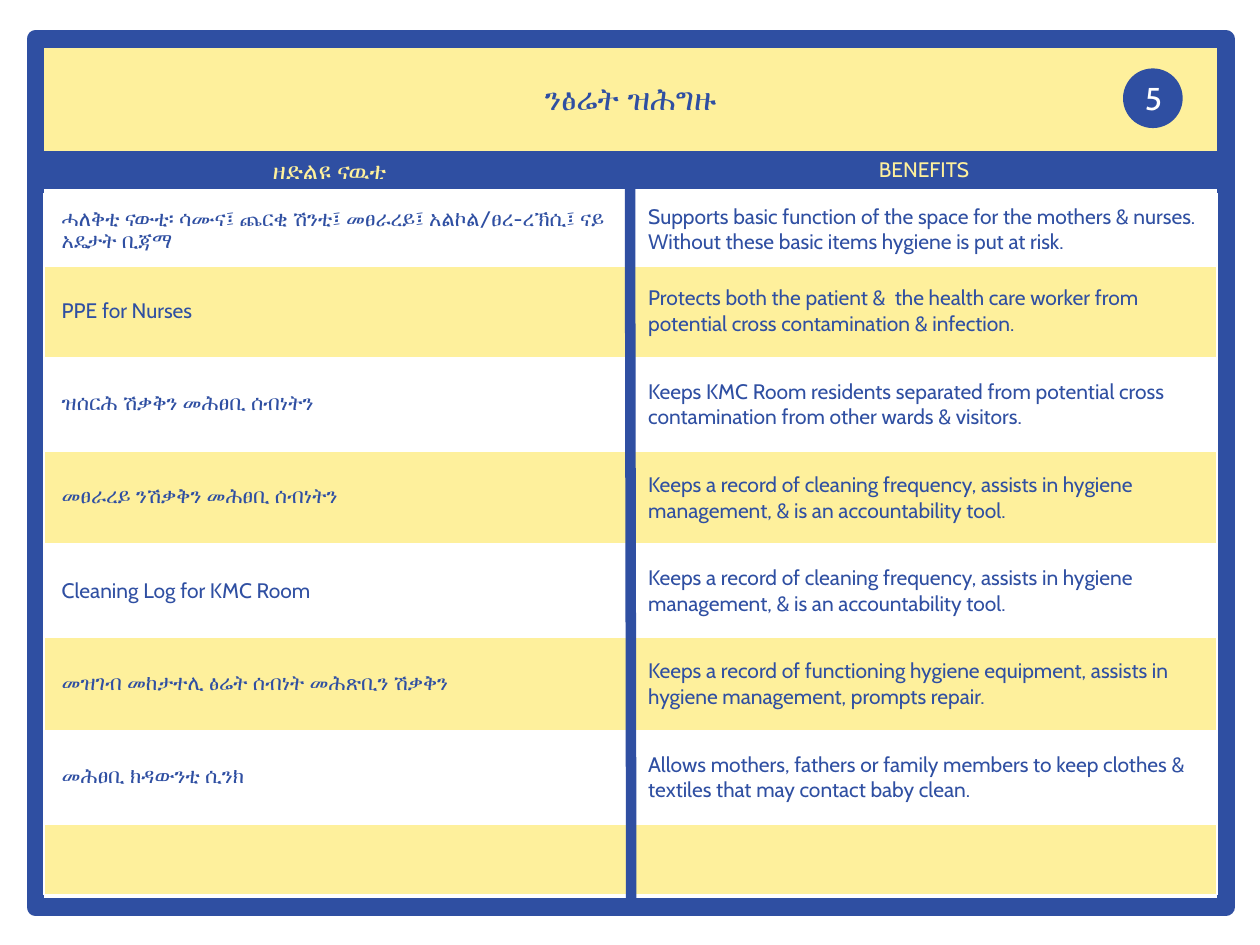
from pptx import Presentation
from pptx.dml.color import RGBColor
from pptx.enum.shapes import MSO_CONNECTOR as CONN, MSO_SHAPE as SHAPE
from pptx.enum.text import MSO_ANCHOR as ANCHOR, PP_ALIGN as ALIGN
from pptx.oxml import parse_xml
from pptx.oxml.ns import nsdecls
from pptx.util import Inches, Pt

BLUE, YELLOW, WHITE = "2F4FA2", "FEF09C", "FFFFFF"
rgb = RGBColor.from_string


def put_text(tf, text, size=12, color=BLUE, bold=None, align=None, anchor=None):
    tf.word_wrap = True
    if anchor is not None:
        tf.vertical_anchor = anchor
    p = tf.paragraphs[0]
    p.alignment = align
    r = p.add_run()
    r.text = text
    r.font.name, r.font.size, r.font.bold = "Cabin", Pt(size), bold
    r.font.color.rgb = rgb(color)


def grid(*cells):
    """Lengths on a grid of 100 columns by 75 rows."""
    return [int(Inches(0.1) * c) for c in cells]


prs = Presentation()
prs.slide_width, prs.slide_height = grid(100, 75)
s = prs.slides.add_slide(prs.slide_layouts[6])
LEFT, WIDTH = 2.8, 94.5

# Title band, frame and header bar
for top, height, fill, line in [
    (3.1, 11.8, YELLOW, 0),
    (3.1, 68.9, None, 10),
    (12, 3, BLUE, 0),
]:
    sp = s.shapes.add_shape(SHAPE.RECTANGLE, *grid(LEFT, top, WIDTH, height))
    sp.shadow.inherit = False
    if fill:
        sp.fill.solid()
        sp.fill.fore_color.rgb = rgb(fill)
    else:
        sp.fill.background()
    if line:
        sp.line.width = Pt(line)
        sp.line.color.rgb = rgb(BLUE)
    else:
        sp.line.fill.background()

# Column headers
for left, text, size in [(LEFT, "ዘድልዩ ናዉቲ", 14), (50, "BENEFITS", 12)]:
    sp = s.shapes.add_textbox(*grid(left, 11.9, 46.7, 3.2))
    put_text(sp.text_frame, text, size=size, color=YELLOW, align=ALIGN.CENTER)

# Table of items and benefits
rows = [
    ("ሓለቅቲ ናውቲ፡ ሳሙና፤ ጨርቂ ሽንቲ፤ መፀራረይ፤ አልኮል/ፀረ-ረኽሲ፤ ናይ አዴታት ቢጃማ",
     "Supports basic function of the space for the mothers & nurses. "
     "Without these basic items hygiene is put at risk."),
    ("PPE for Nurses",
     "Protects both the patient &  the health care worker from potential "
     "cross contamination & infection."),
    ("ዝሰርሕ ሽቃቅን መሕፀቢ ሰብነትን",
     "Keeps KMC Room residents separated from potential cross "
     "contamination from other wards & visitors."),
    ("መፀራረይ ንሽቃቅን መሕፀቢ ሰብነትን",
     "Keeps a record of cleaning frequency, assists in hygiene "
     "management, & is an accountability tool."),
    ("Cleaning Log for KMC Room",
     "Keeps a record of cleaning frequency, assists in hygiene "
     "management, & is an accountability tool."),
    ("መዝገብ መከታተሊ ፅሬት ሰብነት መሕጽቢን ሽቃቅን",
     "Keeps a record of functioning hygiene equipment, assists in "
     "hygiene management, prompts repair."),
    ("መሕፀቢ ክዳውንቲ ሲንክ",
     "Allows mothers, fathers or family members to keep clothes & "
     "textiles that may contact baby clean."),
    ("", ""),
]
last = len(rows) - 1
table = s.shapes.add_table(len(rows), 2, *grid(3.5, 15.4, 93.1, 56)).table
table.first_row = table.horz_banding = False
for col in table.columns:
    col.width = grid(46.55)[0]
for i, texts in enumerate(rows):
    table.rows[i].height = grid(5.6 if i in (0, last) else 7.4)[0]
    for j, text in enumerate(texts):
        cell = table.cell(i, j)
        cell.margin_left, cell.margin_right = grid(1.4, 0.7)
        cell.margin_top, cell.margin_bottom = grid(0.4, 0.4)
        cell.vertical_anchor = ANCHOR.MIDDLE
        # White borders, thicker under the first row
        for side in "LRTB":
            thick = (i, side) in [(0, "B"), (1, "T")]
            cell._tc.get_or_add_tcPr().append(parse_xml(
                f'<a:ln{side} {nsdecls("a")} w="{Pt(3 if thick else 1)}">'
                f'<a:solidFill><a:srgbClr val="{WHITE}"/></a:solidFill></a:ln{side}>'))
        cell.fill.solid()
        cell.fill.fore_color.rgb = rgb(YELLOW if i % 2 else WHITE)
        if text:
            put_text(cell.text_frame, text)

# Column divider and header rule
for ends in [(50, 14.6, 50.1, 71.5), (LEFT, 14.6, 96.6, 14.6)]:
    line = s.shapes.add_connector(CONN.STRAIGHT, *grid(*ends))
    line.line.width = Pt(6)
    line.line.color.rgb = rgb(BLUE)
    line._element.spPr.append(parse_xml(f'<a:effectLst {nsdecls("a")}/>'))

# Title
sp = s.shapes.add_textbox(*grid(LEFT, 5.8, WIDTH, 4))
put_text(sp.text_frame, "ንፅሬት ዝሕግዙ", size=18, bold=True,
         align=ALIGN.CENTER, anchor=ANCHOR.MIDDLE)

# Page number badge
sp = s.shapes.add_shape(SHAPE.OVAL, *grid(89.2, 5.5, 4.6, 4.6))
sp.shadow.inherit = False
sp.fill.solid()
sp.fill.fore_color.rgb = rgb(BLUE)
sp.line.color.rgb = rgb(BLUE)
sp.line.width = Pt(1)
put_text(sp.text_frame, "5", size=18, color=WHITE,
         align=ALIGN.CENTER, anchor=ANCHOR.MIDDLE)

prs.save("out.pptx")
